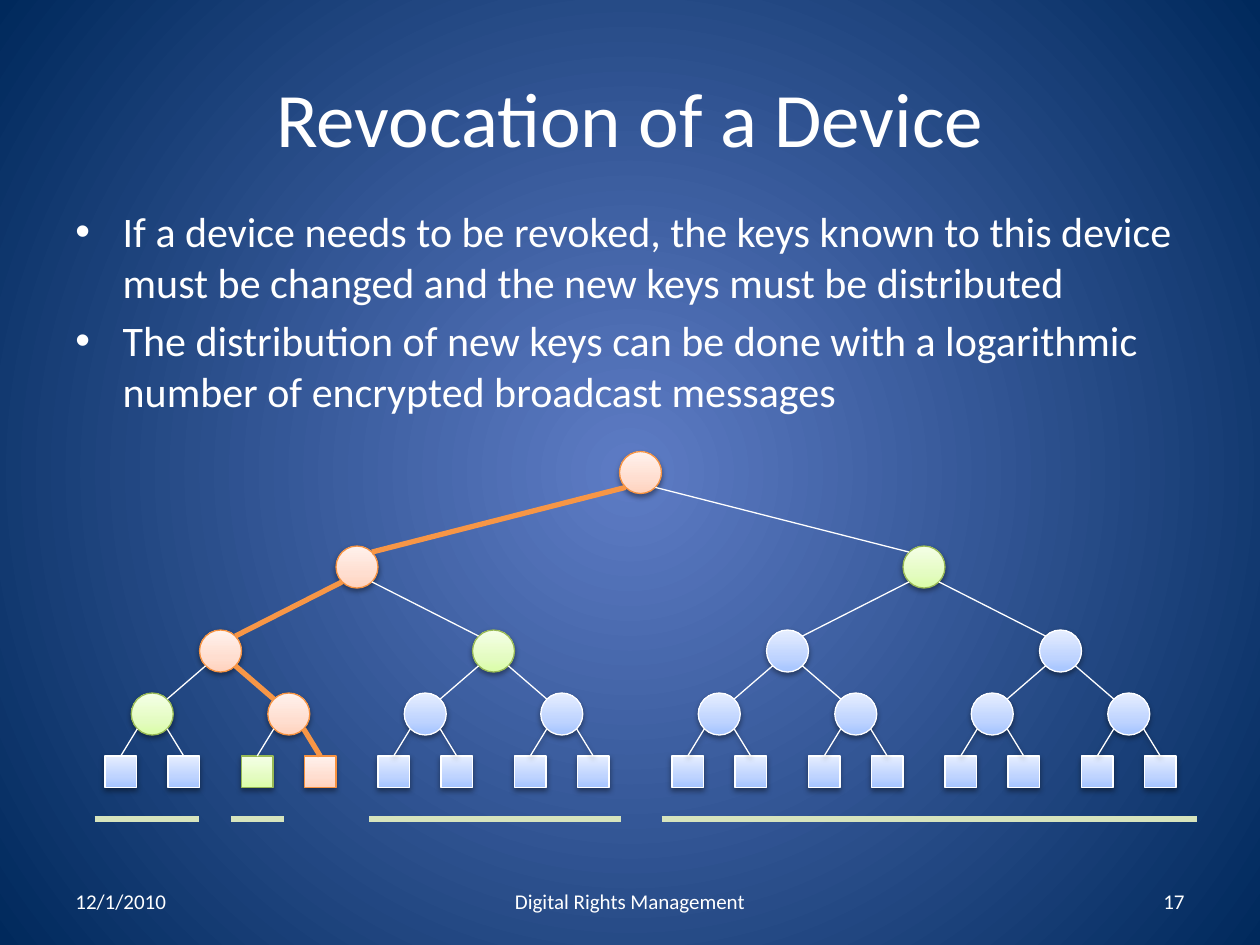
import lxml.etree
import pptx
import pptx.dml.color
import pptx.enum.shapes
import pptx.enum.text
import pptx.oxml.ns
import pptx.util

Pt = pptx.util.Pt
qn = pptx.oxml.ns.qn
RGB = pptx.dml.color.RGBColor.from_string
SHAPE = pptx.enum.shapes.MSO_SHAPE
ALIGN = pptx.enum.text.PP_ALIGN
ANCHOR = pptx.enum.text.MSO_ANCHOR

COLORS = {
    "text": "FFFFFF", "edge": "FFFFFF", "revoked edge": "F79646", "bar": "D7E4BD",
    "center": "5E7CC5", "rim": "00295C", "shadow": "000000",
}
# Gradient from bottom to top, then outline
NODE_STYLES = {
    "revoked": (("FFD2BD", "FFDED0", "FFF2ED"), "F69240"),
    "sibling": (("DAFDA7", "E4FCC2", "F5FFE7"), "98B955"),
    "normal": (("A4C4FF", "BFD4FF", "E6EEFF"), "FFFFFF"),
}

REVOKED_LEAF = 3
LEAF_COUNT = 16
LEVEL_TOPS = (432, 396, 360, 312, 258)  # leaves first, root last
LEAF_SIZE, KEY_SIZE = 18, 24
DIAGONAL = KEY_SIZE / 2 * 0.71  # offset of a circle's 45 degree point


def add_child(parent, tag, **attributes):
    child = lxml.etree.SubElement(parent, qn(tag))
    for name, value in attributes.items():
        child.set(name, str(value))
    return child


def set_gradient(parent, stops, circular=False):
    """Replace the solid fill of parent by a gradient of (percent, colour) stops."""
    solid = parent.find(qn("a:solidFill"))
    gradient = solid.makeelement(qn("a:gradFill"), {"rotWithShape": "1"})
    stop_list = add_child(gradient, "a:gsLst")
    for percent, color in stops:
        stop = add_child(stop_list, "a:gs", pos=percent * 1000)
        add_child(stop, "a:srgbClr", val=color)
    if circular:
        circle = add_child(gradient, "a:path", path="circle")
        add_child(circle, "a:fillToRect", l=50000, t=50000, r=50000, b=50000)
    else:
        add_child(gradient, "a:lin", ang=16200000, scaled=0)
    parent.replace(solid, gradient)


def add_shadow(effects):
    shadow = add_child(effects, "a:outerShdw", blurRad=Pt(3.1), dist=Pt(1.6),
                       dir=5400000, rotWithShape=0)
    color = add_child(shadow, "a:srgbClr", val=COLORS["shadow"])
    add_child(color, "a:alpha", val=38000)


def write_text(frame, paragraphs, size=12, align=ALIGN.LEFT, bullet=None, font="Calibri"):
    for number, text in enumerate(paragraphs):
        para = frame.paragraphs[0] if number == 0 else frame.add_paragraph()
        para.alignment = align
        span = para.add_run()
        span.text = text
        span.font.size = Pt(size)
        span.font.name = font
        span.font.color.rgb = RGB(COLORS["text"])
        if bullet:
            para.space_before = Pt(size * 0.2)
            properties = para._p.get_or_add_pPr()
            properties.set("marL", str(Pt(27)))
            properties.set("indent", str(Pt(-27)))
            add_child(properties, "a:buFont", typeface="Arial")
            add_child(properties, "a:buChar", char=bullet)


class SlideBuilder:
    def __init__(self, page):
        self.page = page

    def background(self):
        self.page.background.fill.solid()
        set_gradient(self.page.element.find(".//" + qn("p:bgPr")),
                     ((0, COLORS["center"]), (100, COLORS["rim"])), circular=True)

    def text(self, left, top, width, height, *paragraphs, anchor=ANCHOR.MIDDLE, **style):
        box = self.page.shapes.add_textbox(Pt(left), Pt(top), Pt(width), Pt(height))
        box.text_frame.word_wrap = True
        box.text_frame.vertical_anchor = anchor
        write_text(box.text_frame, paragraphs, **style)

    def node(self, kind, center, top, size, style):
        node = self.page.shapes.add_shape(
            kind, Pt(center - size / 2), Pt(top), Pt(size), Pt(size))
        colors, outline = NODE_STYLES[style]
        node.fill.solid()
        properties = node._element.spPr
        set_gradient(properties, zip((0, 35, 100), colors))
        node.line.color.rgb = RGB(outline)
        node.line.width = Pt(0.75)
        node.shadow.inherit = False
        add_shadow(properties.find(qn("a:effectLst")))
        return node

    def line(self, start, end, color, width, shadow=False, target=None):
        line = self.page.shapes.add_connector(
            pptx.enum.shapes.MSO_CONNECTOR.STRAIGHT, *map(Pt, (*start, *end)))
        if target is not None:
            line.end_connect(target, 0)
        line.line.color.rgb = RGB(COLORS[color])
        line.line.width = Pt(width)
        effects = add_child(line._element.spPr, "a:effectLst")
        if shadow:
            add_shadow(effects)


def node_style(level, index):
    on_path = REVOKED_LEAF >> level
    return {on_path: "revoked", on_path ^ 1: "sibling"}.get(index, "normal")


def draw_tree(builder):
    # Leaves sit in pairs, with a wider gap between the two halves
    centers = [69 + 36 * (leaf % 2) + 78 * (leaf // 2) + 12 * (leaf // 8)
               for leaf in range(LEAF_COUNT)]
    children = []
    for level, top in enumerate(LEVEL_TOPS):
        kind, size = (SHAPE.OVAL, KEY_SIZE) if level else (SHAPE.RECTANGLE, LEAF_SIZE)
        if level:
            centers = [sum(centers[i:i + 2]) / 2 for i in range(0, len(centers), 2)]
        nodes = [builder.node(kind, center, top, size, node_style(level, index))
                 for index, center in enumerate(centers)]

        # Edges down to the previous level
        for index, (child, child_center) in enumerate(children):
            side = 1 if index % 2 else -1
            start = (centers[index // 2] + side * DIAGONAL, top + KEY_SIZE / 2 + DIAGONAL)
            is_leaf = level == 1
            end = (child_center - side * DIAGONAL,
                   LEVEL_TOPS[level - 1] + KEY_SIZE / 2 - DIAGONAL)
            revoked = node_style(level - 1, index) == "revoked"
            builder.line(start, end, "revoked edge" if revoked else "edge",
                         3 if revoked else 0.75, shadow=is_leaf and index >= 4,
                         target=child if is_leaf else None)
        children = list(zip(nodes, centers))


def main():
    deck = pptx.Presentation()
    deck.slide_width, deck.slide_height = Pt(720), Pt(540)
    builder = SlideBuilder(deck.slides.add_slide(deck.slide_layouts[6]))
    builder.background()

    # Title and bullets
    builder.text(36, 21.6, 648, 90, "Revocation of a Device", size=44, align=ALIGN.CENTER)
    builder.text(
        36, 114, 660, 138,
        "If a device needs to be revoked, the keys known to this device must be changed "
        "and the new keys must be distributed",
        "The distribution of new keys can be done with a logarithmic number of encrypted "
        "broadcast messages",
        size=24, bullet="•", anchor=ANCHOR.TOP)

    # Footer
    for left, width, text, align in (
            (36, 168, "12/1/2010", ALIGN.LEFT),
            (246, 228, "Digital Rights Management", ALIGN.CENTER),
            (516, 168, "17", ALIGN.RIGHT)):
        builder.text(left, 500.5, width, 28.75, text, align=align)

    # Key tree and the bars under the groups that get new keys
    draw_tree(builder)
    for left, right in ((54, 114), (132, 162), (211, 355), (378, 684)):
        builder.line((left, 468), (right, 468), "bar", 3)

    deck.save("out.pptx")


if __name__ == "__main__":
    main()
